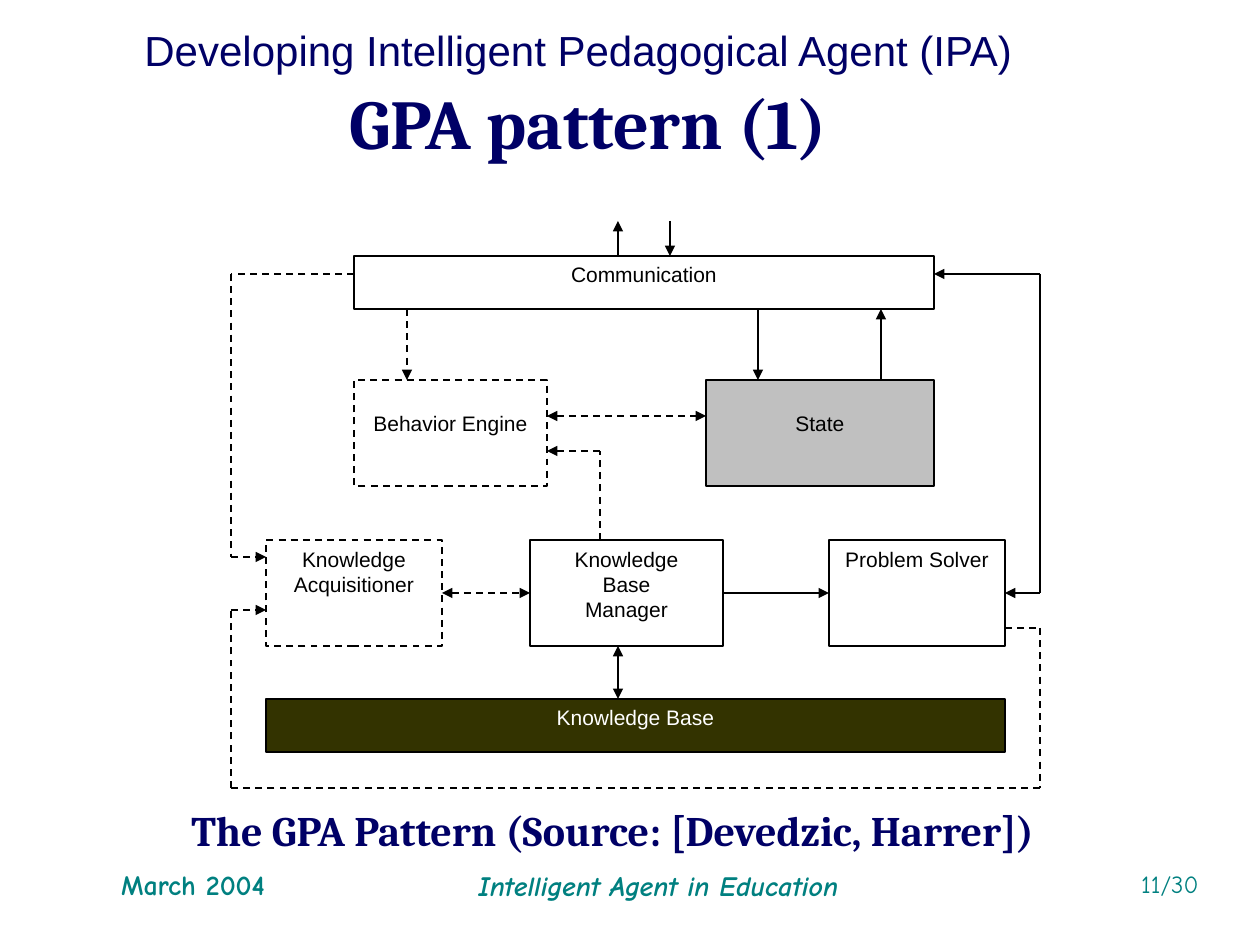
"""Build the slide that shows the GPA pattern as a block diagram."""
from lxml.etree import SubElement
from pptx import Presentation
from pptx.dml.color import RGBColor
from pptx.enum.dml import MSO_LINE
from pptx.enum.shapes import MSO_CONNECTOR, MSO_SHAPE
from pptx.enum.text import MSO_ANCHOR, MSO_AUTO_SIZE, PP_ALIGN
from pptx.oxml.ns import qn
from pptx.util import Emu, Inches, Pt

PX = Inches(1) / 126
COLORS = {
    "navy": "000066",
    "teal": "008080",
    "black": "000000",
    "white": "FFFFFF",
    "grey": "C0C0C0",
    "olive": "333300",
}
FORMATS = {
    "header": {"name": "Arial", "size": Pt(24), "bold": False},
    "title": {"name": "Cambria", "size": Pt(40), "bold": True},
    "caption": {"name": "Cambria", "size": Pt(24), "bold": True},
    "date": {"name": "Comic Neue", "size": Pt(16), "bold": True},
    "footer": {"name": "Comic Neue", "size": Pt(16), "bold": True, "italic": True},
    "number": {"name": "Comic Neue", "size": Pt(14)},
    "block": {"name": "Arial", "size": Pt(12)},
}
LEFT, CENTER, RIGHT = PP_ALIGN.LEFT, PP_ALIGN.CENTER, PP_ALIGN.RIGHT

LABELS = [
    ("March 2004", (62, 861, 262, 63), "date", "teal", CENTER, True),
    ("Developing Intelligent Pedagogical Agent (IPA)", (132, 18, 900, 63),
     "header", "navy", LEFT, False),
    ("Intelligent Agent in Education", (433, 862, 451, 63),
     "footer", "teal", CENTER, True),
    ("11/30", (949, 863, 262, 63), "number", "teal", RIGHT, True),
    ("The GPA Pattern (Source: [Devedzic, Harrer])", (179, 798, 882, 63),
     "caption", "navy", LEFT, True),
]
BLOCKS = [
    ("Communication", (354, 256, 580, 53), "white", "black", False, 6),
    ("Behavior Engine", (354, 380, 193, 106), "white", "black", True, 31),
    ("State", (706, 380, 228, 106), "grey", "black", False, 31),
    ("Knowledge\nAcquisitioner", (266, 540, 176, 106), "white", "black", True, 6),
    ("Problem Solver", (829, 540, 176, 106), "white", "black", False, 6),
    ("Knowledge\nBase\nManager", (530, 540, 193, 106), "white", "black", False, 6),
    ("Knowledge Base", (266, 699, 739, 53), "olive", "white", False, 6),
]
SOLID_ROUTES = [
    ([(618, 256), (618, 221)], False),
    ([(670, 221), (670, 256)], False),
    ([(758, 309), (758, 380)], False),
    ([(881, 380), (881, 309)], False),
    ([(723, 593), (829, 593)], False),
    ([(618, 646), (618, 699)], True),
    ([(934, 274), (1040, 274), (1040, 593), (1005, 593)], True),
]
DASHED_ROUTES = [
    ([(407, 309), (407, 380)], False),
    ([(442, 593), (530, 593)], True),
    ([(547, 416), (706, 416)], True),
    ([(600, 540), (600, 451), (547, 451)], False),
    ([(354, 274), (231, 274), (231, 557), (266, 557)], False),
    ([(1005, 628), (1040, 628), (1040, 788), (231, 788), (231, 610), (266, 610)],
     False),
]


def emu(*lengths):
    """Turn px lengths into EMU."""
    return [Emu(round(length * PX)) for length in lengths]


def rgb(color):
    """Look up a named colour."""
    return RGBColor.from_string(COLORS[color])


class Board:
    """Hold the style and the current slide."""

    def __init__(self, slide):
        """Keep the slide to draw on."""
        self.slide = slide

    def set_text(self, sp, text, style, color, align):
        """Fill a shape with formatted paragraphs."""
        tf = sp.text_frame
        tf.text = text
        for p in tf.paragraphs:
            p.alignment = align
            for r in p.runs:
                for key, value in FORMATS[style].items():
                    setattr(r.font, key, value)
                r.font.color.rgb = rgb(color)
        return tf

    def stroke(self, line, dashed):
        """Set a black solid or dashed line."""
        line.color.rgb = rgb("black")
        line.width = Pt(1 if dashed else 0.75)
        if dashed:
            line.dash_style = MSO_LINE.DASH

    def title(self, text, box):
        """Place and format the title placeholder."""
        sp = self.slide.shapes.title
        sp.left, sp.top, sp.width, sp.height = emu(*box)
        tf = self.set_text(sp, text, "title", "navy", CENTER)
        tf.auto_size = MSO_AUTO_SIZE.NONE
        tf.vertical_anchor = MSO_ANCHOR.MIDDLE

    def label(self, text, box, style, color, align, wrap):
        """Add a text box."""
        sp = self.slide.shapes.add_textbox(*emu(*box))
        self.set_text(sp, text, style, color, align).word_wrap = wrap

    def block(self, text, box, fill, color, dashed, inset):
        """Add a diagram block with its text at the top."""
        sp = self.slide.shapes.add_shape(MSO_SHAPE.RECTANGLE, *emu(*box))
        sp.shadow.inherit = False
        sp.fill.solid()
        sp.fill.fore_color.rgb = rgb(fill)
        self.stroke(sp.line, dashed)
        tf = self.set_text(sp, text, "block", color, CENTER)
        tf.word_wrap = True
        tf.vertical_anchor = MSO_ANCHOR.TOP
        tf.margin_top = emu(inset)[0]

    def segment(self, start, end, dashed, heads):
        """Add one straight line with the given arrowheads."""
        sp = self.slide.shapes.add_connector(
            MSO_CONNECTOR.STRAIGHT, *emu(*start, *end))
        self.stroke(sp.line, dashed)
        props = sp._element.spPr
        for head in heads:
            SubElement(props.find(qn("a:ln")), qn(head), type="triangle")
        SubElement(props, qn("a:effectLst"))

    def route(self, points, dashed, double):
        """Join points with lines that end in an arrowhead."""
        last = len(points) - 2
        for i, (start, end) in enumerate(zip(points, points[1:])):
            heads = ["a:headEnd"] if double and i == 0 else []
            heads += ["a:tailEnd"] if i == last else []
            self.segment(start, end, dashed, heads)


def main():
    """Draw the slide and save it."""
    prs = Presentation()
    prs.slide_width, prs.slide_height = Inches(10), Inches(7.5)
    board = Board(prs.slides.add_slide(prs.slide_layouts[5]))
    board.title("GPA pattern (1)", (53, 42, 1071, 158))
    for label in LABELS:
        board.label(*label)
    for block in BLOCKS:
        board.block(*block)
    for dashed, routes in ((False, SOLID_ROUTES), (True, DASHED_ROUTES)):
        for points, double in routes:
            board.route(points, dashed, double)
    prs.save("out.pptx")


if __name__ == "__main__":
    main()
